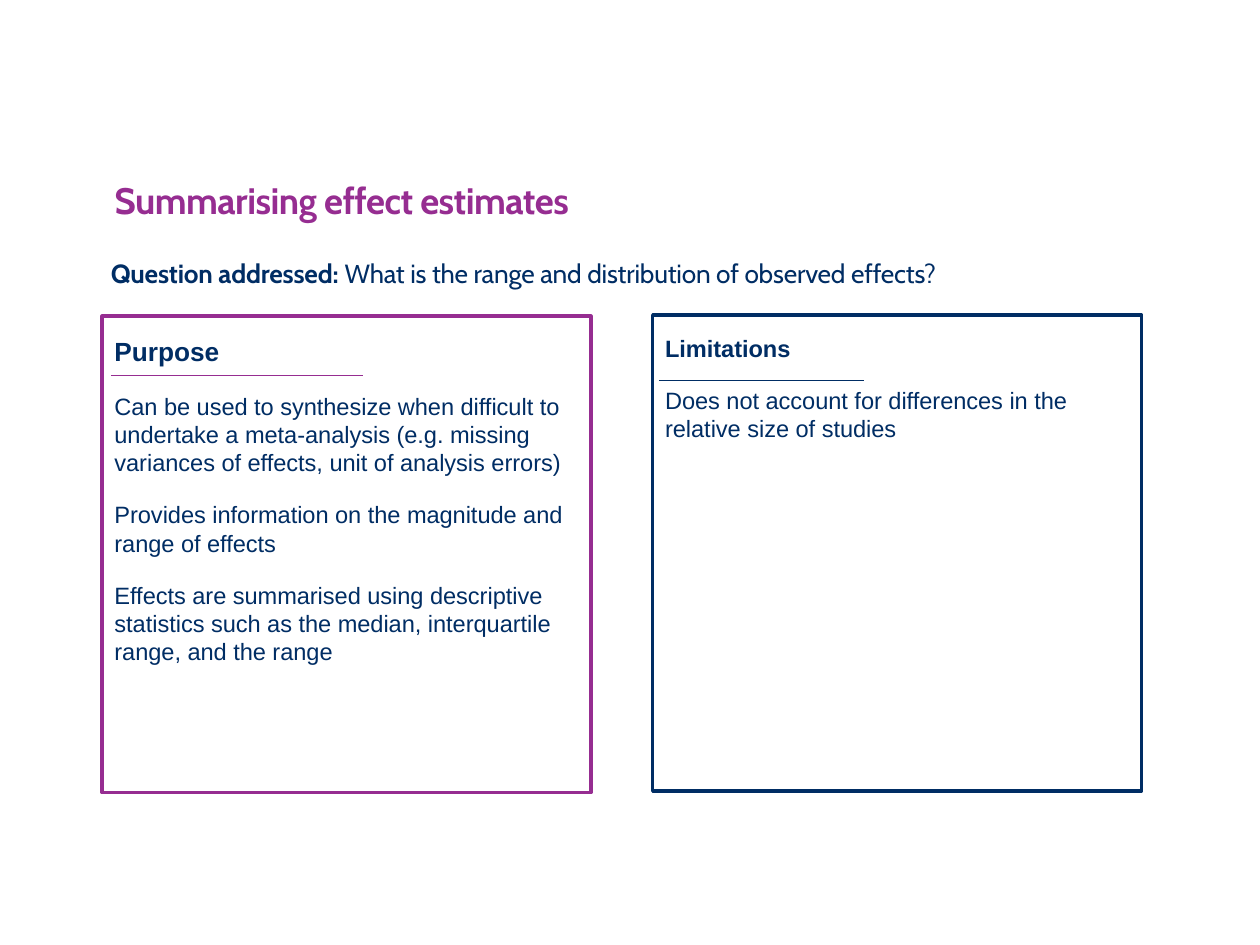
from dataclasses import dataclass

from lxml import etree
from pptx import Presentation
from pptx.dml.color import RGBColor
from pptx.enum.shapes import MSO_CONNECTOR, MSO_SHAPE
from pptx.enum.text import MSO_ANCHOR, MSO_AUTO_SIZE, PP_ALIGN
from pptx.oxml.ns import qn
from pptx.slide import Slide
from pptx.text.text import TextFrame, _Paragraph
from pptx.util import Inches, Pt

RECTANGLE = MSO_SHAPE.RECTANGLE
STRAIGHT = MSO_CONNECTOR.STRAIGHT
TOP = MSO_ANCHOR.TOP
LEFT = PP_ALIGN.LEFT
NO_AUTOFIT = MSO_AUTO_SIZE.NONE
TITLE_ONLY = 5


@dataclass(frozen=True)
class Theme:
    navy: RGBColor = RGBColor.from_string("002D64")
    purple: RGBColor = RGBColor.from_string("962D91")
    heading_font: str = "Cabin"
    panel_font: str = "Arial"
    title_size: float = 21
    question_size: float = 15
    purpose_size: float = 15
    body_size: float = 13.5
    border: float = 2
    rule: float = 0.75


THEME = Theme()


@dataclass(frozen=True)
class Panel:
    left: float
    top: float
    colour: RGBColor
    heading: str
    heading_size: float
    statements: tuple[str, ...]
    rule_left: float
    rule_top: float
    rule_width: float
    width: float = 3.88
    height: float = 3.78


PANELS = (
    Panel(
        0.81, 2.51, THEME.purple, "Purpose", THEME.purpose_size,
        (
            "Can be used to synthesize when difficult to undertake a meta-analysis "
            "(e.g. missing variances of effects, unit of analysis errors)",
            "Provides information on the magnitude and range of effects",
            "Effects are summarised using descriptive statistics such as the median, "
            "interquartile range, and the range",
        ),
        rule_left=0.88, rule_top=2.98, rule_width=2,
    ),
    Panel(
        5.18, 2.5, THEME.navy, "Limitations", THEME.body_size,
        ("Does not account for differences in the relative size of studies",),
        rule_left=5.23, rule_top=3.02, rule_width=1.63,
    ),
)


def add_text(paragraph: _Paragraph, text: str, *, size: float, font: str,
             colour: RGBColor = THEME.navy, bold: bool = False,
             tracking: int = 0) -> None:
    paragraph.alignment = LEFT
    run = paragraph.add_run()
    run.text = text
    run.font.name = font
    run.font.size = Pt(size)
    run.font.bold = bold
    run.font.color.rgb = colour
    if tracking:
        run.font._element.set("spc", str(tracking))


def set_frame(frame: TextFrame, left: float, top: float,
              right: float, bottom: float) -> None:
    frame.word_wrap = True
    frame.auto_size = NO_AUTOFIT
    frame.vertical_anchor = TOP
    frame.margin_left, frame.margin_top = Inches(left), Inches(top)
    frame.margin_right, frame.margin_bottom = Inches(right), Inches(bottom)


def add_title(slide: Slide) -> None:
    title = slide.shapes.title
    title.left, title.top = Inches(0.81), Inches(1.36)
    title.width, title.height = Inches(6.69), Inches(0.52)
    set_frame(title.text_frame, 0.1, 0.05, 0.1, 0.05)
    add_text(title.text_frame.paragraphs[0], "Summarising effect estimates",
             size=THEME.title_size, font=THEME.heading_font,
             colour=THEME.purple, bold=True, tracking=-30)


def add_question(slide: Slide) -> None:
    question = slide.shapes.add_textbox(
        Inches(0.88), Inches(2.04), Inches(8.18), Inches(0.4))
    set_frame(question.text_frame, 0, 0, 0, 0)
    for text, bold in (
        ("Question addressed: ", True),
        ("What is the range and distribution of observed effects?", False),
    ):
        add_text(question.text_frame.paragraphs[0], text, bold=bold,
                 size=THEME.question_size, font=THEME.heading_font, tracking=-10)


def add_panel(slide: Slide, panel: Panel) -> None:
    group = slide.shapes.add_group_shape()
    box = group.shapes.add_shape(
        RECTANGLE, Inches(panel.left), Inches(panel.top),
        Inches(panel.width), Inches(panel.height))
    box.shadow.inherit = False
    box.fill.background()
    box.line.color.rgb = panel.colour
    box.line.width = Pt(THEME.border)
    frame = box.text_frame
    set_frame(frame, 0.1, 0.15, 0.1, 0.05)

    heading = frame.paragraphs[0]
    heading.space_after = Pt(panel.heading_size / 2)
    add_text(heading, panel.heading, size=panel.heading_size,
             font=THEME.panel_font, bold=True)
    for text in panel.statements:
        statement = frame.add_paragraph()
        statement.space_before = statement.space_after = Pt(THEME.body_size / 2)
        add_text(statement, text, size=THEME.body_size, font=THEME.panel_font)

    rule = group.shapes.add_connector(
        STRAIGHT, Inches(panel.rule_left), Inches(panel.rule_top),
        Inches(panel.rule_left + panel.rule_width), Inches(panel.rule_top))
    rule.line.color.rgb = panel.colour
    rule.line.width = Pt(THEME.rule)
    etree.SubElement(rule._element.spPr, qn("a:effectLst"))


def main() -> None:
    presentation = Presentation()
    presentation.slide_width = Inches(10)
    presentation.slide_height = Inches(7.5)
    slide = presentation.slides.add_slide(presentation.slide_layouts[TITLE_ONLY])
    add_title(slide)
    add_question(slide)
    for panel in PANELS:
        add_panel(slide, panel)
    presentation.save("out.pptx")


if __name__ == "__main__":
    main()
